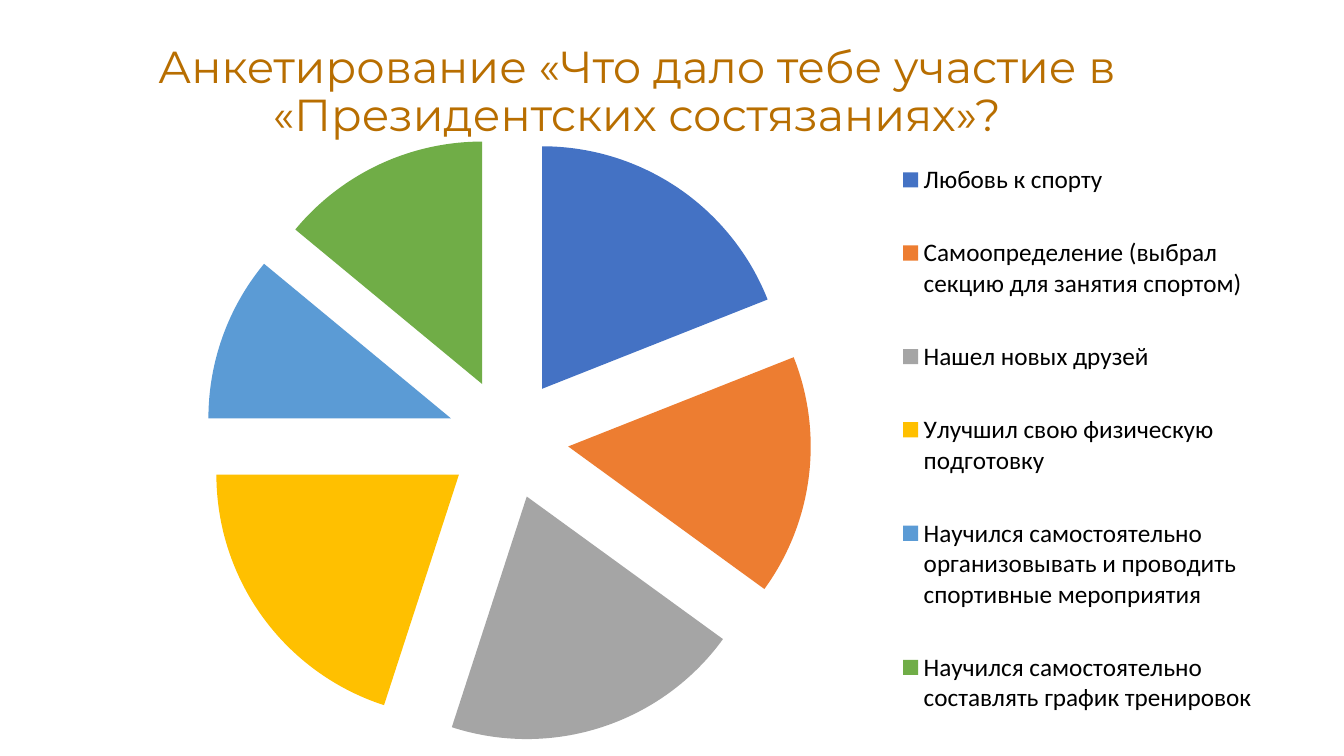
from lxml import etree
from pptx import Presentation
from pptx.chart.data import CategoryChartData
from pptx.dml.color import RGBColor
from pptx.enum.chart import XL_CHART_TYPE, XL_LEGEND_POSITION
from pptx.enum.text import MSO_ANCHOR, PP_ALIGN
from pptx.oxml.ns import qn
from pptx.util import Inches, Pt

PIE = XL_CHART_TYPE.PIE
LEGEND_RIGHT = XL_LEGEND_POSITION.RIGHT
MIDDLE = MSO_ANCHOR.MIDDLE
CENTER = PP_ALIGN.CENTER

OCHRE = RGBColor(0xB8, 0x6E, 0x00)
BLACK = RGBColor(0x00, 0x00, 0x00)
BLUE = RGBColor(0x44, 0x72, 0xC4)
ORANGE = RGBColor(0xED, 0x7D, 0x31)
GRAY = RGBColor(0xA5, 0xA5, 0xA5)
YELLOW = RGBColor(0xFF, 0xC0, 0x00)
SKY = RGBColor(0x5B, 0x9B, 0xD5)
GREEN = RGBColor(0x70, 0xAD, 0x47)

ANSWERS = [
    ("Любовь к спорту", 19, BLUE),
    ("Самоопределение (выбрал секцию для занятия спортом)", 16, ORANGE),
    ("Нашел новых друзей", 20, GRAY),
    ("Улучшил свою физическую подготовку", 20, YELLOW),
    ("Научился самостоятельно организовывать и проводить спортивные мероприятия", 11, SKY),
    ("Научился самостоятельно составлять график тренировок", 14, GREEN),
]


def add_text(slide, text, left, top, width, height, *, font, size, color):
    tb = slide.shapes.add_textbox(Inches(left), Inches(top), Inches(width), Inches(height))
    tf = tb.text_frame
    tf.word_wrap = True
    tf.vertical_anchor = MIDDLE
    p = tf.paragraphs[0]
    p.alignment = CENTER
    p.line_spacing = 0.9
    r = p.add_run()
    r.text = text
    r.font.name = font
    r.font.size = Pt(size)
    r.font.color.rgb = color


prs = Presentation()
prs.slide_width = Inches(13.33)
prs.slide_height = Inches(7.5)
s = prs.slides.add_slide(prs.slide_layouts[6])

# Title
add_text(s, "Анкетирование «Что дало тебе участие в «Президентских состязаниях»?",
         0.57, 0.2, 11.5, 1.45, font="Montserrat", size=32, color=OCHRE)

# Pie chart of the answers
data = CategoryChartData()
data.categories = [answer for answer, _, _ in ANSWERS]
data.add_series("Series 1", [share for _, share, _ in ANSWERS])
chart = s.shapes.add_chart(PIE, Inches(1.14), Inches(1.21), Inches(11.5), Inches(6.29), data).chart
chart.has_title = False
chart.font.name = "Calibri"
chart.font.size = Pt(18)
chart.font.color.rgb = BLACK

# Legend over the full chart height, as fractions of the chart
chart.has_legend = True
chart.legend.position = LEGEND_RIGHT
chart.legend.include_in_layout = False
legend = chart.legend._element
for old in legend.findall(qn("c:layout")):
    legend.remove(old)
layout = etree.Element(qn("c:layout"))
manual = etree.SubElement(layout, qn("c:manualLayout"))
for tag, val in (("xMode", "edge"), ("yMode", "edge"),
                 ("x", "0.66"), ("y", "0"), ("w", "0.34"), ("h", "1")):
    etree.SubElement(manual, qn(f"c:{tag}"), val=val)
legend.find(qn("c:legendPos")).addnext(layout)

# Pulled-apart slices, one colour each
plot = chart.plots[0]
plot.vary_by_categories = True
series = plot.series[0]
explosion = etree.Element(qn("c:explosion"), val="25")
series._element.find(qn("c:tx")).addnext(explosion)
for i, (_, _, color) in enumerate(ANSWERS):
    fill = series.points[i].format.fill
    fill.solid()
    fill.fore_color.rgb = color

prs.save("out.pptx")
